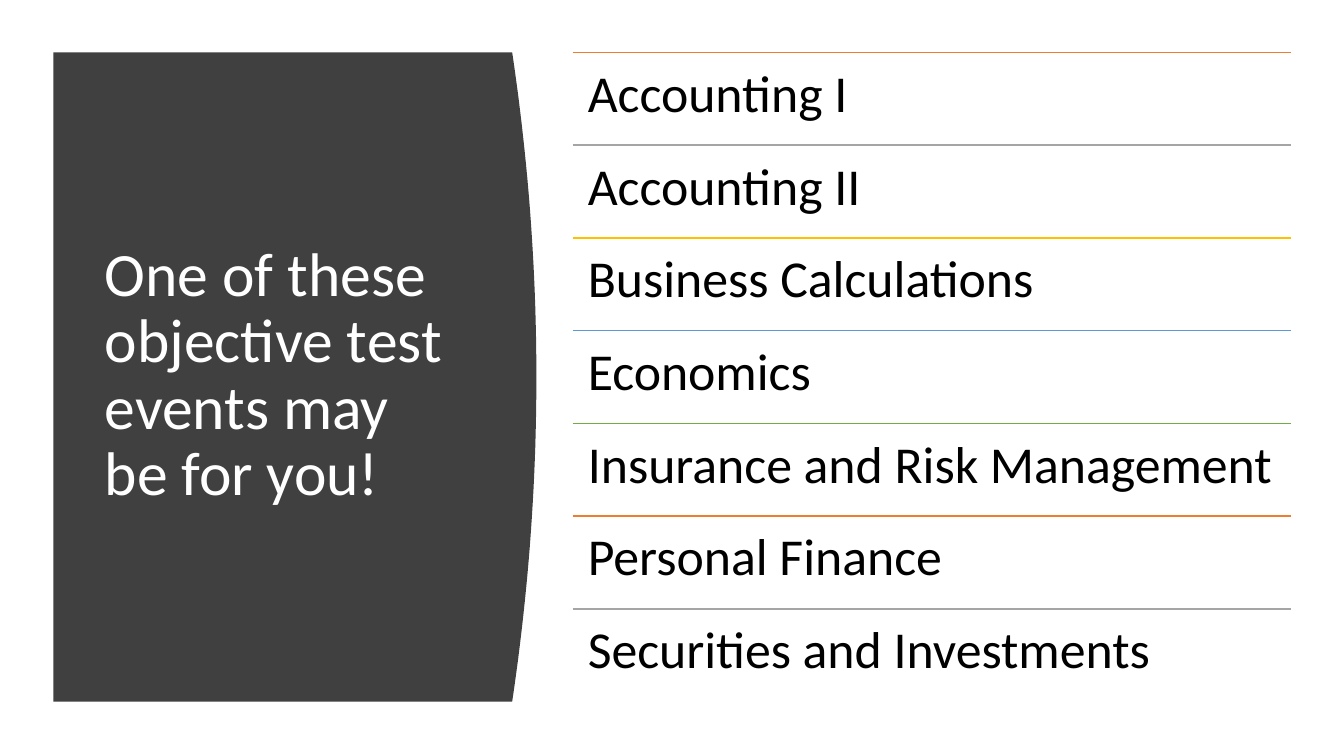
from dataclasses import dataclass

from lxml import etree
from pptx import Presentation
from pptx.dml.color import RGBColor
from pptx.enum import shapes, text
from pptx.oxml import ns
from pptx.slide import Slide
from pptx import util as u

EMU_PER_PX = 9144
CHARCOAL = RGBColor(0x40, 0x40, 0x40)
WHITE = RGBColor(0xFF, 0xFF, 0xFF)
BLACK = RGBColor(0x00, 0x00, 0x00)
ORANGE = RGBColor(0xED, 0x7D, 0x31)
GRAY = RGBColor(0xA5, 0xA5, 0xA5)
GOLD = RGBColor(0xFF, 0xC0, 0x00)
BLUE = RGBColor(0x5B, 0x9B, 0xD5)
GREEN = RGBColor(0x70, 0xAD, 0x47)

PANEL_LEFT, PANEL_TOP, PANEL_HEIGHT = 53, 52, 644
PANEL_CORNER, PANEL_BULGE, CURVE_STEPS = 508, 24, 46
LIST_LEFT, LIST_WIDTH = 568, 712


@dataclass(frozen=True)
class Event:
    name: str
    rule_color: RGBColor


EVENTS = [
    Event("Accounting I", ORANGE),
    Event("Accounting II", GRAY),
    Event("Business Calculations", GOLD),
    Event("Economics", BLUE),
    Event("Insurance and Risk Management", GREEN),
    Event("Personal Finance", ORANGE),
    Event("Securities and Investments", GRAY),
]
ROW_HEIGHT = PANEL_HEIGHT // len(EVENTS)


def px(length: int) -> u.Emu:
    return u.Emu(length * EMU_PER_PX)


def add_text(slide: Slide, words: str, *, left: int, top: int, width: int,
             height: int, size: int, color: RGBColor, inset_x: int,
             inset_y: int, anchor: text.MSO_ANCHOR) -> None:
    frame = slide.shapes.add_textbox(px(left), px(top), px(width), px(height)).text_frame
    frame.word_wrap = True
    frame.vertical_anchor = anchor
    frame.margin_left = frame.margin_right = px(inset_x)
    frame.margin_top = frame.margin_bottom = px(inset_y)
    paragraph = frame.paragraphs[0]
    paragraph.line_spacing = 0.9
    run = paragraph.add_run()
    run.text = words
    run.font.name = "Calibri"
    run.font.size = u.Pt(size)
    run.font.color.rgb = color


def add_panel(slide: Slide) -> None:
    edge = []
    for step in range(CURVE_STEPS + 1):
        share = step / CURVE_STEPS
        bulge = PANEL_BULGE * (1 - (2 * share - 1) ** 2)
        edge.append((round((PANEL_CORNER + bulge) * EMU_PER_PX),
                     round((PANEL_TOP + PANEL_HEIGHT * share) * EMU_PER_PX)))
    outline = slide.shapes.build_freeform(px(PANEL_LEFT), px(PANEL_TOP))
    outline.add_line_segments(edge + [(px(PANEL_LEFT), px(PANEL_TOP + PANEL_HEIGHT))])
    panel = outline.convert_to_shape()
    panel.shadow.inherit = False
    panel.fill.solid()
    panel.fill.fore_color.rgb = CHARCOAL
    panel.line.fill.background()


def add_event(slide: Slide, event: Event, top: int) -> None:
    rule = slide.shapes.add_connector(
        shapes.MSO_CONNECTOR.STRAIGHT,
        px(LIST_LEFT), px(top), px(LIST_LEFT + LIST_WIDTH), px(top))
    rule.line.color.rgb = event.rule_color
    rule.line.width = u.Pt(1)
    etree.SubElement(rule.element.spPr, ns.qn("a:effectLst"))
    add_text(slide, event.name, left=LIST_LEFT, top=top, width=LIST_WIDTH,
             height=ROW_HEIGHT, size=37, color=BLACK, inset_x=15, inset_y=15,
             anchor=text.MSO_ANCHOR.TOP)


def main() -> None:
    deck = Presentation()
    deck.slide_width, deck.slide_height = px(1333), px(750)
    slide = deck.slides.add_slide(deck.slide_layouts[6])
    add_panel(slide)
    add_text(slide, "One of these objective test events may be for you!",
             left=94, top=111, width=374, height=524, size=44, color=WHITE,
             inset_x=10, inset_y=5, anchor=text.MSO_ANCHOR.MIDDLE)
    for row, event in enumerate(EVENTS):
        add_event(slide, event, PANEL_TOP + row * ROW_HEIGHT)
    deck.save("out.pptx")


if __name__ == "__main__":
    main()
